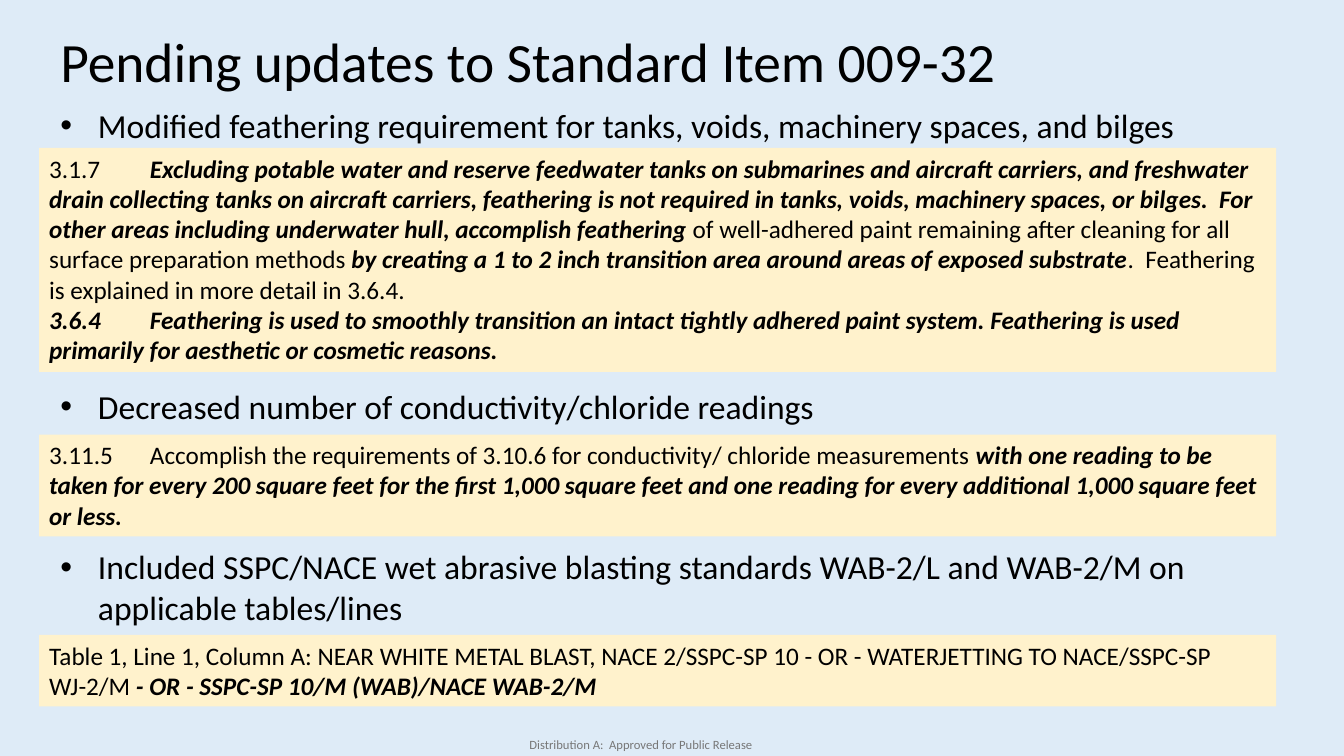
"""Builds the slide on pending updates to Standard Item 009-32."""
from lxml.etree import SubElement
from pptx import Presentation
from pptx.dml.color import RGBColor
from pptx.enum.shapes import MSO_SHAPE
from pptx.enum.text import MSO_ANCHOR, PP_ALIGN
from pptx.oxml.ns import qn
from pptx.util import Cm, Pt

COLORS = {"background": "DEEBF7", "quote": "FFF2CC", "text": "000000", "footer": "777777"}
REVISED = {"bold": True, "italic": True}
KEPT = {"bold": False, "italic": False}


class UpdateSlide:
    def __init__(self, deck, font="Calibri"):
        self.slide = deck.slides.add_slide(deck.slide_layouts[6])
        self.font = font
        fill = self.slide.background.fill
        fill.solid()
        fill.fore_color.rgb = self.color("background")

    def color(self, name):
        return RGBColor.from_string(COLORS[name])

    def apply(self, target, formats):
        for name, value in formats.items():
            setattr(target, name, value)

    def fill_paragraph(self, paragraph, runs, size, color="text", **formats):
        self.apply(paragraph, {"alignment": PP_ALIGN.LEFT, **formats})
        for words, emphasis in runs:
            run = paragraph.add_run()
            run.text = words
            self.apply(run.font, {"name": self.font, "size": Pt(size), **emphasis})
            run.font.color.rgb = self.color(color)

    def text_frame(self, box, anchor=MSO_ANCHOR.TOP):
        frame = self.slide.shapes.add_textbox(*map(Cm, box)).text_frame
        self.apply(frame, {"word_wrap": True, "vertical_anchor": anchor})
        return frame

    def title(self, words, box):
        frame = self.text_frame(box, MSO_ANCHOR.MIDDLE)
        self.fill_paragraph(frame.paragraphs[0], [(words, KEPT)], 39.6, line_spacing=0.9)

    def footer(self, words, box):
        frame = self.text_frame(box)
        self.fill_paragraph(frame.paragraphs[0], [(words, KEPT)], 9, "footer",
                            alignment=PP_ALIGN.CENTER)

    def bullets(self, items, box, indent=0.95):
        frame = self.text_frame(box)
        for index, (words, gap) in enumerate(items):
            paragraph = frame.add_paragraph() if index else frame.paragraphs[0]
            self.fill_paragraph(paragraph, [(words, KEPT)], 24, space_before=Pt(gap))
            properties = paragraph._p.get_or_add_pPr()
            properties.set("marL", str(Cm(indent)))
            properties.set("indent", str(-Cm(indent)))
            SubElement(properties, qn("a:buFont"), typeface="Arial")
            SubElement(properties, qn("a:buChar"), char="•")

    def quote(self, paragraphs, top, height, left=0.99, width=31.17):
        panel = self.slide.shapes.add_shape(
            MSO_SHAPE.RECTANGLE, *map(Cm, (left, top, width, height)))
        panel.shadow.inherit = False
        panel.fill.solid()
        panel.fill.fore_color.rgb = self.color("quote")
        panel.line.fill.background()
        frame = panel.text_frame
        self.apply(frame, {"word_wrap": True, "vertical_anchor": MSO_ANCHOR.TOP})
        for index, runs in enumerate(paragraphs):
            paragraph = frame.add_paragraph() if index else frame.paragraphs[0]
            self.fill_paragraph(paragraph, runs, 18)


FEATHERING = [
    [
        ("3.1.7\t", KEPT),
        ("Excluding potable water and reserve feedwater tanks on submarines and aircraft "
         "carriers, and freshwater drain collecting tanks on aircraft carriers, feathering is "
         "not required in tanks, voids, machinery spaces, or bilges.  For other areas "
         "including underwater hull, accomplish feathering ", REVISED),
        ("of well-adhered paint remaining after cleaning for all surface preparation "
         "methods ", KEPT),
        ("by creating a 1 to 2 inch transition area around areas of exposed substrate", REVISED),
        (".  Feathering is explained in more detail in 3.6.4.", KEPT),
    ],
    [
        ("3.6.4\tFeathering is used to smoothly transition an intact tightly adhered paint "
         "system. Feathering is used primarily for aesthetic or cosmetic reasons.", REVISED),
    ],
]
READINGS = [[
    ("3.11.5\tAccomplish the requirements of 3.10.6 for conductivity/ chloride "
     "measurements ", KEPT),
    ("with one reading to be taken for every 200 square feet for the first 1,000 square feet "
     "and one reading for every additional 1,000 square feet or less.", REVISED),
]]
BLASTING = [[
    ("Table 1, Line 1, Column A: NEAR WHITE METAL BLAST, NACE 2/SSPC-SP 10 - OR - "
     "WATERJETTING TO NACE/SSPC-SP WJ-2/M ", KEPT),
    ("- OR - SSPC-SP 10/M (WAB)/NACE WAB-2/M", REVISED),
]]
UPDATES = [
    ("Modified feathering requirement for tanks, voids, machinery spaces, and bilges", 0),
    ("Decreased number of conductivity/chloride readings", 172),
    ("Included SSPC/NACE wet abrasive blasting standards WAB-2/L and WAB-2/M on applicable "
     "tables/lines", 86),
]


def main():
    deck = Presentation()
    deck.slide_width, deck.slide_height = Cm(33.87), Cm(19.05)
    page = UpdateSlide(deck)
    page.title("Pending updates to Standard Item 009-32", (1.27, 0.76, 29.21, 1.75))
    page.bullets(UPDATES, (1.27, 2.51, 30.91, 16.66))
    for paragraphs, top, height in (
        (FEATHERING, 3.73, 5.64), (READINGS, 10.95, 2.57), (BLASTING, 16, 1.8),
    ):
        page.quote(paragraphs, top, height)
    page.footer("Distribution A:  Approved for Public Release", (10.31, 18.44, 11.68, 0.64))
    deck.save("out.pptx")


if __name__ == "__main__":
    main()
